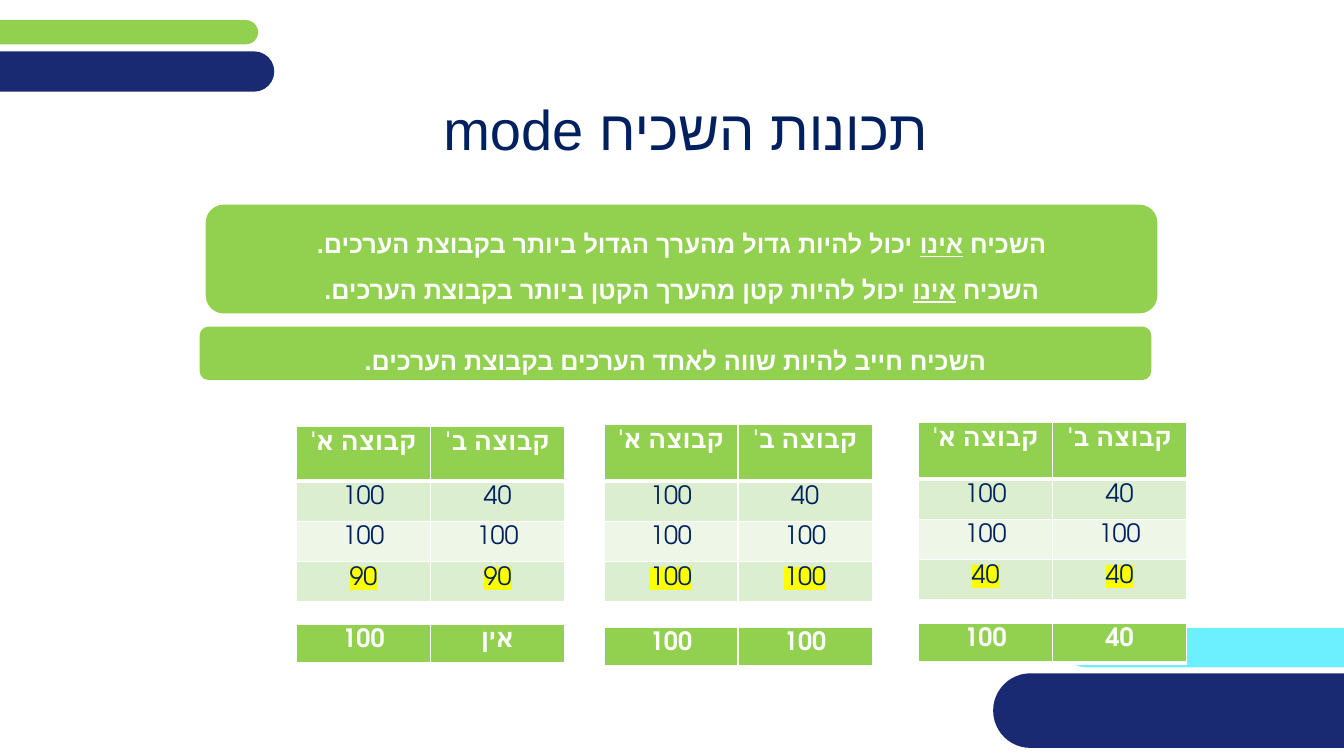
from lxml import etree
from pptx import Presentation
from pptx import util as u
from pptx.dml.color import RGBColor
from pptx.enum import shapes, text
from pptx.oxml.ns import qn

GREEN, NAVY, CYAN, INK, WHITE = "92D050", "192A72", "6CF0FF", "002060", "FFFFFF"
BANDS = ["DBEECF", "EEF6E8"]
YELLOW = "FFFF00"


def rgb(value):
    return RGBColor.from_string(value)


def box(*lengths):
    return [u.Inches(v) for v in lengths]


class Deck:
    font = "Arial"

    def __init__(self):
        self.prs = Presentation()
        self.prs.slide_width, self.prs.slide_height = box(13.33, 7.5)
        self.s = self.prs.slides.add_slide(self.prs.slide_layouts[6])

    def fill_text(self, tf, lines, color, spacing=None, highlight=None, cs="Arial", **fmt):
        """Each line is a list of (text, underlined) runs."""
        for i, line in enumerate(lines):
            p = tf.paragraphs[0] if i == 0 else tf.add_paragraph()
            p.alignment = text.PP_ALIGN.CENTER
            p._p.get_or_add_pPr().set("rtl", "1")
            if spacing:
                p.line_spacing = spacing
            for words, underlined in line:
                r = p.add_run()
                r.text = words
                values = {"size": u.Pt(18), "name": self.font, "underline": underlined, **fmt}
                for name, value in values.items():
                    setattr(r.font, name, value)
                r.font.color.rgb = rgb(color)
                rPr = r._r.get_or_add_rPr()
                if highlight:
                    mark = etree.Element(qn("a:highlight"))
                    etree.SubElement(mark, qn("a:srgbClr"), val=highlight)
                    rPr.find(qn("a:solidFill")).addnext(mark)
                latin = rPr.find(qn("a:latin"))
                latin.addnext(etree.Element(qn("a:cs"), typeface=cs))

    def shape(self, kind, at, fill):
        sp = self.s.shapes.add_shape(kind, *box(*at))
        sp.shadow.inherit = False
        sp.fill.solid()
        sp.fill.fore_color.rgb = rgb(fill)
        sp.line.fill.background()
        return sp

    def bar(self, at, fill):
        self.shape(shapes.MSO_SHAPE.ROUNDED_RECTANGLE, at, fill).adjustments[0] = 0.5

    def statement(self, at, lines):
        sp = self.shape(shapes.MSO_SHAPE.FLOWCHART_ALTERNATE_PROCESS, at, GREEN)
        self.fill_text(sp.text_frame, lines, WHITE, spacing=1.5, bold=True)

    def title(self, at, words):
        tf = self.s.shapes.add_textbox(*box(*at)).text_frame
        tf.word_wrap = True
        tf.vertical_anchor = text.MSO_ANCHOR.MIDDLE
        self.fill_text(tf, [[(words, None)]], INK, size=u.Pt(40))

    def border(self, cell, bottom):
        tcPr = cell._tc.get_or_add_tcPr()
        for i, side in enumerate(("lnL", "lnR", "lnT", "lnB")):
            width = bottom if side == "lnB" else 1
            ln = etree.Element(qn(f"a:{side}"), w=str(u.Pt(width)))
            fill = etree.SubElement(ln, qn("a:solidFill"))
            etree.SubElement(fill, qn("a:srgbClr"), val=WHITE)
            tcPr.insert(i, ln)

    def table(self, left, top, heights, rows):
        frame = self.s.shapes.add_table(len(rows), 2, *box(left, top, 2.66, sum(heights)))
        tbl = frame.table
        for col in tbl.columns:
            col.width = u.Inches(1.33)
        for i, (height, row) in enumerate(zip(heights, rows)):
            tbl.rows[i].height = u.Inches(height)
            head = i == 0
            for j, words in enumerate(row):
                cell = tbl.cell(i, j)
                cell.fill.solid()
                cell.fill.fore_color.rgb = rgb(GREEN if head else BANDS[(i - 1) % 2])
                self.border(cell, 3 if head else 1)
                self.fill_text(cell.text_frame, [[(words, None)]], WHITE if head else INK,
                               highlight=YELLOW if i == 3 else None,
                               cs="TeX Gyre Adventor", bold=head)


d = Deck()

# Corner bars
for at, fill in [((10.57, 6.23, 5.21, 0.39), CYAN), ((-0.28, 0.2, 2.84, 0.24), GREEN),
                 ((-0.53, 0.51, 3.25, 0.4), NAVY), ((9.85, 6.68, 4.11, 0.74), NAVY)]:
    d.bar(at, fill)

# Title and statements
d.title((1.53, 0.88, 10.54, 0.79), "תכונות השכיח mode")
d.statement((2.04, 2.03, 9.44, 1.08), [
    [("השכיח\u00a0", None), ("אינו", True),
     (f"\u00a0יכול להיות {size} מהערך ה{size} ביותר בקבוצת הערכים.", None)]
    for size in ("גדול", "קטן")])
d.statement((1.98, 3.24, 9.44, 0.53),
            [[("השכיח חייב להיות שווה לאחד הערכים בקבוצת הערכים.", None)]])

# Group tables, each with its mode below
for left, top, head, mode_top, last, modes in [
        (5.99, 4.21, 0.56, 6.22, "100", ("100", "100")),
        (2.94, 4.23, 0.54, 6.19, "90", ("100", "אין")),
        (9.11, 4.19, 0.56, 6.18, "40", ("100", "40"))]:
    d.table(left, top, [head] + [0.31] * 3,
            [("קבוצה א'", "קבוצה ב'"), ("100", "40"), ("100", "100"), (last, last)])
    d.table(left, mode_top, [0.25], [modes])

d.prs.save("out.pptx")
